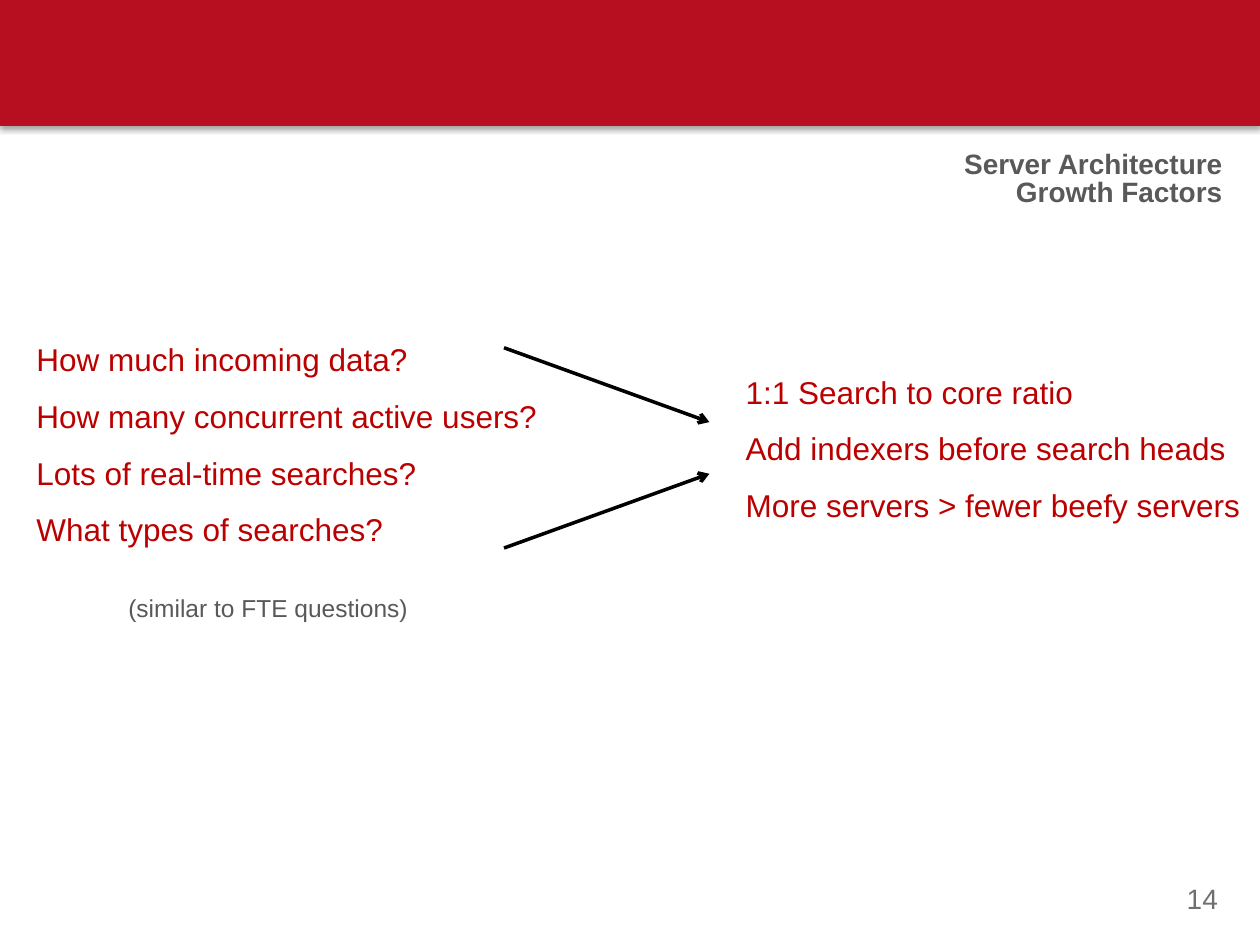
"""Builds the slide on server architecture growth factors."""
from lxml.etree import SubElement
from pptx import Presentation
from pptx.dml.color import RGBColor
from pptx.enum.shapes import MSO_CONNECTOR as Connector, MSO_SHAPE as Shape
from pptx.enum.text import MSO_AUTO_SIZE as AutoSize, PP_ALIGN as Align
from pptx.oxml.ns import qn
from pptx.util import Inches, Pt

COLORS = {
    "banner": "B70F20",
    "point": "BB0000",
    "title": "595959",
    "number": "6F6F6F",
    "line": "000000",
    "white": "FFFFFF",
}
POINT_FONT = {"size": Pt(18)}
POINT_SPACING = {"line_spacing": 1.5}
QUESTIONS = [
    "How much incoming data?",
    "How many concurrent active users?",
    "Lots of real-time searches?",
    "What types of searches?",
]
GUIDELINES = [
    "1:1 Search to core ratio",
    "Add indexers before search heads",
    "More servers > fewer beefy servers",
]


def color(name):
    return RGBColor.from_string(COLORS[name])


def set_values(target, values):
    for name, value in values.items():
        setattr(target, name, value)


def add_banner(slide):
    banner = slide.shapes.add_shape(Shape.RECTANGLE, 0, 0, Inches(10), Inches(1))
    banner.fill.solid()
    banner.fill.fore_color.rgb = color("banner")
    banner.line.fill.background()
    effects = SubElement(banner._element.spPr, qn("a:effectLst"))
    shadow = SubElement(effects, qn("a:outerShdw"), blurRad=str(Pt(3.1)),
                        dist=str(Pt(1.8)), dir="5400000", rotWithShape="0")
    black = SubElement(shadow, qn("a:srgbClr"), val=COLORS["line"])
    SubElement(black, qn("a:alpha"), val="35000")


def add_text(slide, box, lines, color_name, font, layout=None, wrap=False):
    shape = slide.shapes.add_textbox(*map(Inches, box))
    frame = shape.text_frame
    frame.word_wrap = wrap
    frame.auto_size = AutoSize.NONE if wrap else AutoSize.SHAPE_TO_FIT_TEXT
    frame.text = "\n".join(lines)
    for paragraph in frame.paragraphs:
        set_values(paragraph, layout or {})
        set_values(paragraph.font, {"name": "Arial", **font})
        paragraph.font.color.rgb = color(color_name)
    return shape


def add_title(slide):
    title = add_text(slide, (3.25, 1.15, 6.55, 0.7),
                     ["Server Architecture", "Growth Factors"], "title",
                     {"size": Pt(16), "bold": True},
                     {"alignment": Align.RIGHT, "line_spacing": Pt(16.4)}, wrap=True)
    title.line.color.rgb = color("white")
    title.line.width = Pt(0.75)


def add_arrow(slide, start, end):
    arrow = slide.shapes.add_connector(Connector.STRAIGHT, *map(Inches, start + end))
    arrow.line.color.rgb = color("line")
    arrow.line.width = Pt(2)
    SubElement(arrow.line._get_or_add_ln(), qn("a:tailEnd"), type="arrow")
    SubElement(arrow._element.spPr, qn("a:effectLst"))


def main():
    presentation = Presentation()
    presentation.slide_width, presentation.slide_height = Inches(10), Inches(7.5)
    slide = presentation.slides.add_slide(presentation.slide_layouts[6])

    add_banner(slide)
    add_text(slide, (9.32, 6.95, 0.48, 0.37), ["14"], "number", {"size": Pt(16)})
    add_title(slide)
    add_text(slide, (5.82, 2.76, 4.18, 1.44), GUIDELINES, "point", POINT_FONT, POINT_SPACING)
    add_text(slide, (0.19, 2.5, 4.21, 1.89), QUESTIONS, "point", POINT_FONT, POINT_SPACING)
    for start_y, end_y in ((2.76, 3.35), (4.35, 3.76)):
        add_arrow(slide, (4, start_y), (5.63, end_y))
    add_text(slide, (0.92, 4.66, 2.44, 0.34), ["(similar to FTE questions)"], "title",
             {"size": Pt(14)})

    presentation.save("out.pptx")


if __name__ == "__main__":
    main()
